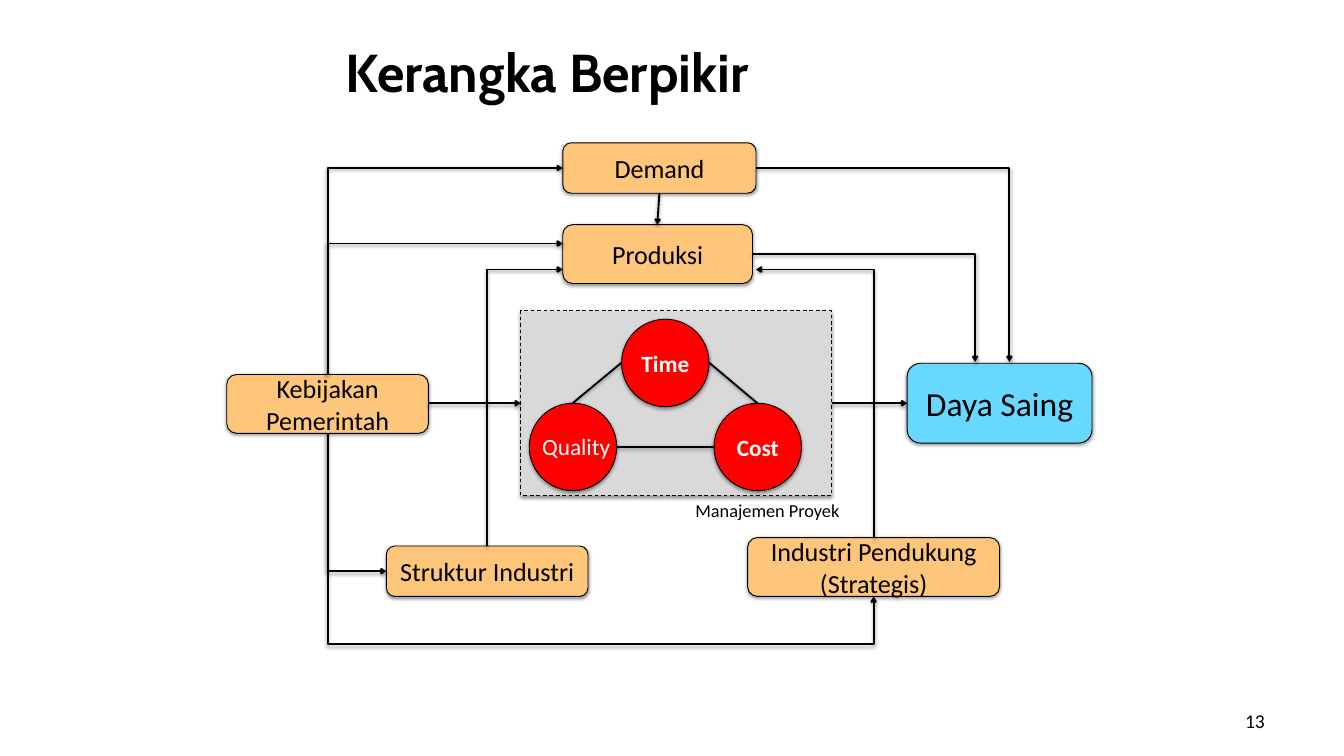
from lxml import etree
from pptx import Presentation
from pptx import util as u
from pptx.dml.color import RGBColor
from pptx.enum import dml, shapes, text
from pptx.oxml.ns import qn

PX = 9525  # EMU per px, 96 px to the inch
BLACK = RGBColor(0x00, 0x00, 0x00)
WHITE = RGBColor(0xFF, 0xFF, 0xFF)
GREY = RGBColor(0xD9, 0xD9, 0xD9)
ORANGE = RGBColor(0xFE, 0xC6, 0x7A)
BLUE = RGBColor(0x69, 0xD8, 0xFF)
RED = RGBColor(0xFF, 0x00, 0x00)
SHAPE = shapes.MSO_SHAPE
ALIGN = text.PP_ALIGN


def px(*lengths):
    return [u.Emu(round(length * PX)) for length in lengths]


def add(parent, tag, **attributes):
    return etree.SubElement(parent, qn(tag), attributes)


class Diagram:
    font = "Calibri"

    def __init__(self, deck):
        self.slide = deck.slides.add_slide(deck.slide_layouts[5])

    def shadow(self, item, alpha, distance):
        effects = item._element.spPr.find(qn("a:effectLst"))
        if effects is None:
            effects = add(item._element.spPr, "a:effectLst")
        outer = add(effects, "a:outerShdw", blurRad=str(u.Pt(4)), dist=str(u.Pt(distance)),
                    dir="5400000", rotWithShape="0")
        color = add(outer, "a:srgbClr", val=str(BLACK))
        add(color, "a:alpha", val=str(alpha * 1000))

    def span(self, item, words, size, color=BLACK, bold=False, align=ALIGN.LEFT, font=font):
        para = item.text_frame.paragraphs[0]
        para.alignment = align
        span = para.add_run()
        span.text = words
        span.font.name, span.font.size = font, u.Pt(size)
        span.font.bold, span.font.color.rgb = bold, color

    def frame(self, item, inset_x, inset_y):
        frame = item.text_frame
        frame.word_wrap = True
        frame.auto_size = text.MSO_AUTO_SIZE.NONE
        frame.vertical_anchor = text.MSO_ANCHOR.MIDDLE
        frame.margin_left, frame.margin_right = px(inset_x, inset_x)
        frame.margin_top, frame.margin_bottom = px(inset_y, inset_y)

    def title(self, words, *place):
        title = self.slide.shapes.title
        title.left, title.top, title.width, title.height = px(*place)
        self.frame(title, 14, 7)
        self.span(title, words, 57.1, bold=True, font="Cabin")

    def page_number(self, words, *place):
        box = self.slide.shapes.add_textbox(*px(*place))
        self.frame(box, 17, 9)
        self.span(box, words, 21, align=ALIGN.RIGHT)

    def label(self, words, size, color, *place):
        box = self.slide.shapes.add_textbox(*px(*place))
        box.text_frame.word_wrap = False
        box.text_frame.auto_size = text.MSO_AUTO_SIZE.SHAPE_TO_FIT_TEXT
        self.span(box, words, size, color)

    def shape(self, kind, fill, *place):
        shape = self.slide.shapes.add_shape(kind, *px(*place))
        shape.fill.solid()
        shape.fill.fore_color.rgb = fill
        shape.line.color.rgb, shape.line.width = BLACK, u.Pt(1)
        shape.shadow.inherit = False
        self.shadow(shape, 42, 1.6)
        return shape

    def panel(self, *place):
        self.shape(SHAPE.RECTANGLE, GREY, *place).line.dash_style = dml.MSO_LINE.DASH

    def node(self, words, *place, fill=ORANGE, size=28):
        node = self.shape(SHAPE.ROUNDED_RECTANGLE, fill, *place)
        self.frame(node, 10, 5)
        self.span(node, words, size, align=ALIGN.CENTER)

    def circle(self, words, left, top, diameter=125):
        circle = self.shape(SHAPE.OVAL, RED, left, top, diameter, diameter)
        if words:
            self.frame(circle, 0, 0)
            self.span(circle, words, 25, WHITE, True, ALIGN.CENTER)

    def line(self, start, end, arrow=True, kind=shapes.MSO_CONNECTOR.STRAIGHT):
        line = self.slide.shapes.add_connector(kind, *px(*start, *end))
        line.line.color.rgb, line.line.width = BLACK, u.Pt(2)
        if arrow:
            add(line._element.spPr.find(qn("a:ln")), "a:tailEnd", type="arrow")
        self.shadow(line, 40, 2)
        return line

    def elbow(self, start, end, upright=True, lane=None):
        """One corner, or two by way of a horizontal lane at the given height."""
        (x1, y1), (x2, y2) = start, end
        if upright:  # a quarter turn about the centre makes the first leg vertical
            cx, cy, dx, dy = (x1 + x2) / 2, (y1 + y2) / 2, x2 - x1, y2 - y1
            start, end = (cx - dy / 2, cy + dx / 2), (cx + dy / 2, cy - dx / 2)
        line = self.line(start, end, kind=shapes.MSO_CONNECTOR.ELBOW)
        properties = line._element.spPr
        if upright:
            properties.find(qn("a:xfrm")).set("rot", "5400000")
        geometry = properties.find(qn("a:prstGeom"))
        if lane is None:
            geometry.set("prst", "bentConnector2")
        else:
            ratio = round((lane - y1) / (y2 - y1) * 100000)
            add(geometry.find(qn("a:avLst")), "a:gd", name="adj1", fmla=f"val {ratio}")


def main():
    deck = Presentation()
    deck.slide_width, deck.slide_height = px(1920, 1080)
    page = Diagram(deck)

    # Heading and page number
    page.title("Kerangka Berpikir", 480, 36, 1200, 132)
    page.page_number("13", 1376, 1001, 448, 58)

    # Factors and outcome
    page.panel(744, 444, 444, 264)
    page.node("Demand", 804, 204, 276, 72)
    page.node("Produksi", 804, 321, 271, 84)
    page.node("Kebijakan Pemerintah", 324, 535, 288, 84)
    page.node("Daya Saing", 1296, 519, 264, 114, fill=BLUE, size=36)
    page.node("Struktur Industri", 552, 780, 288, 72)
    page.node("Industri Pendukung (Strategis)", 1068, 768, 360, 84)

    # Project management triangle
    page.circle("Time", 888, 456)
    page.circle("Cost", 1020, 576)
    page.circle("", 756, 576)
    page.label("Manajemen Proyek", 19.6, BLACK, 984, 708, 228, 41)
    for start, end in (((888, 518), (818, 576)), ((881, 638), (1020, 638)),
                       ((1013, 518), (1082, 576))):
        page.line(start, end, arrow=False)
    page.label("Quality", 25, WHITE, 765, 612, 118, 50)

    # Influence of government policy
    policy_top, policy_bottom = (468, 535), (468, 619)
    page.elbow(policy_top, (804, 240))
    page.elbow(policy_top, (804, 348))
    page.elbow(policy_bottom, (1248, 852), lane=920)
    page.elbow(policy_bottom, (552, 816))
    page.line((612, 576), (744, 576))

    # Industries feeding production
    page.elbow((696, 780), (804, 385))
    page.elbow((1248, 768), (1080, 385))
    page.line((942, 276), (939, 321))

    # Paths to competitiveness
    page.elbow((1080, 240), (1442, 517), upright=False)
    page.elbow((1075, 363), (1393, 517), upright=False)
    page.line((1188, 576), (1296, 576))

    deck.save("out.pptx")


if __name__ == "__main__":
    main()
